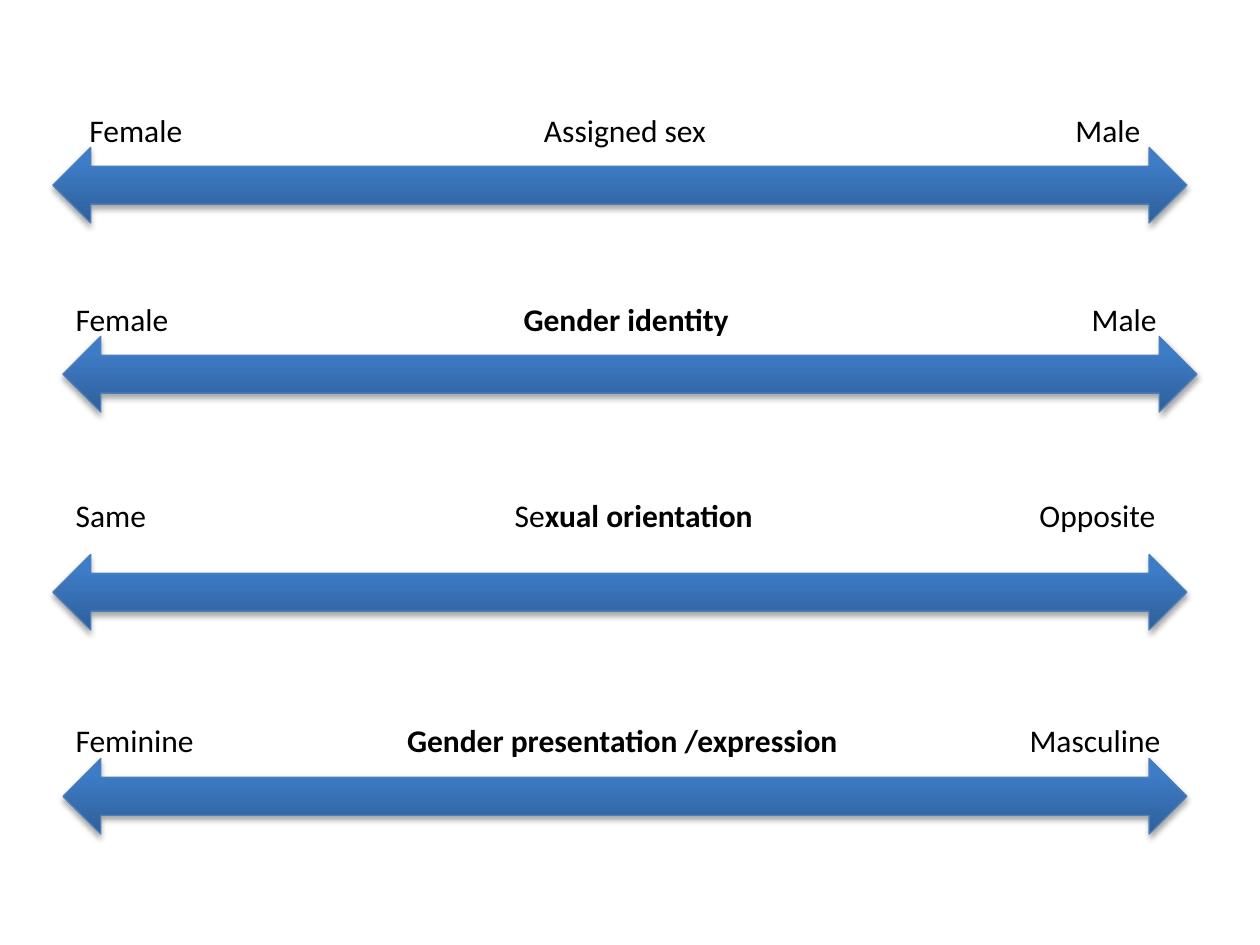
from copy import deepcopy
from dataclasses import dataclass

from lxml import etree
from pptx import Presentation
from pptx import util as u
from pptx.dml.color import RGBColor
from pptx.enum import shapes, text
from pptx.oxml import ns


@dataclass(frozen=True)
class Theme:
    font: str = "Calibri"
    size: int = 18
    ink: str = "000000"
    outline: str = "4B7EBC"
    gradient: tuple = ((0, "2F5F99"), (0.8, "3D7CC7"), (1, "3A7CCB"))


@dataclass(frozen=True)
class Spectrum:
    arrow: tuple
    label_top: float
    left_end: str
    name: tuple
    right_end: str
    text_left: float
    name_center: float
    text_right: float


THEME = Theme()
LABEL_LEFT = 0.5
SPECTRA = (
    Spectrum((0.42, 1.17, 9), 0.83, "Female", (("Assigned sex", False),), "Male", 0.71, 4.96, 9.05),
    Spectrum((0.5, 2.67, 9), 2.33, "Female", (("Gender identity", True),), "Male", 0.6, 4.97, 9.18),
    Spectrum((0.42, 4.4, 9), 3.89, "Same", (("Se", False), ("xual orientation", True)),
             "Opposite", 0.6, 5.03, 9.17),
    Spectrum((0.5, 6.02, 8.92), 5.67, "Feminine", (("Gender presentation /expression", True),),
             "Masculine", 0.6, 4.94, 9.21),
)


def add_element(parent, tag, **attributes):
    values = {key: str(value) for key, value in attributes.items()}
    return etree.SubElement(parent, ns.qn(tag), values)


def fill_gradient(shape):
    shape.fill.gradient()
    shape.fill.gradient_angle = 90
    stop_list = shape.fill._fill._gradFill.gsLst
    stop_list.append(deepcopy(stop_list[0]))
    for stop, (position, color) in zip(shape.fill.gradient_stops, THEME.gradient):
        stop.position = position
        stop.color.rgb = RGBColor.from_string(color)


def add_shadow(shape):
    shape.shadow.inherit = False
    effects = shape._element.spPr.find(ns.qn("a:effectLst"))
    shadow = add_element(effects, "a:outerShdw", blurRad=u.Pt(3.1), dist=u.Pt(1.8),
                         dir=90 * 60000, rotWithShape=0)
    color = add_element(shadow, "a:srgbClr", val="000000")
    add_element(color, "a:alpha", val=35000)


def add_arrow(page, left, top, width):
    arrow = page.shapes.add_shape(shapes.MSO_SHAPE.LEFT_RIGHT_ARROW, u.Inches(left),
                                  u.Inches(top), u.Inches(width), u.Inches(0.6))
    fill_gradient(arrow)
    arrow.line.color.rgb = RGBColor.from_string(THEME.outline)
    arrow.line.width = u.Pt(0.75)
    add_shadow(arrow)


def add_span(para, words, bold=False):
    span = para.add_run()
    span.text = words
    span.font.name = THEME.font
    span.font.size = u.Pt(THEME.size)
    span.font.bold = bold
    span.font.color.rgb = RGBColor.from_string(THEME.ink)


def add_labels(page, spectrum):
    width = 9.42 - LABEL_LEFT
    box = page.shapes.add_textbox(u.Inches(LABEL_LEFT), u.Inches(spectrum.label_top),
                                  u.Inches(width), u.Inches(0.4))
    frame = box.text_frame
    frame.word_wrap = True
    frame.auto_size = text.MSO_AUTO_SIZE.SHAPE_TO_FIT_TEXT
    frame.margin_left = u.Inches(spectrum.text_left - LABEL_LEFT)
    para = frame.paragraphs[0]
    tabs = add_element(para._p.get_or_add_pPr(), "a:tabLst")
    for position, align in ((spectrum.name_center, "ctr"), (spectrum.text_right, "r")):
        add_element(tabs, "a:tab", pos=u.Inches(position - spectrum.text_left), algn=align)
    add_span(para, spectrum.left_end + "\t")
    for words, bold in spectrum.name:
        add_span(para, words, bold)
    add_span(para, "\t" + spectrum.right_end)


def main():
    deck = Presentation()
    deck.slide_width, deck.slide_height = u.Inches(10), u.Inches(7.5)
    page = deck.slides.add_slide(deck.slide_layouts[6])
    for spectrum in SPECTRA:
        add_arrow(page, *spectrum.arrow)
        add_labels(page, spectrum)
    deck.save("out.pptx")


if __name__ == "__main__":
    main()
